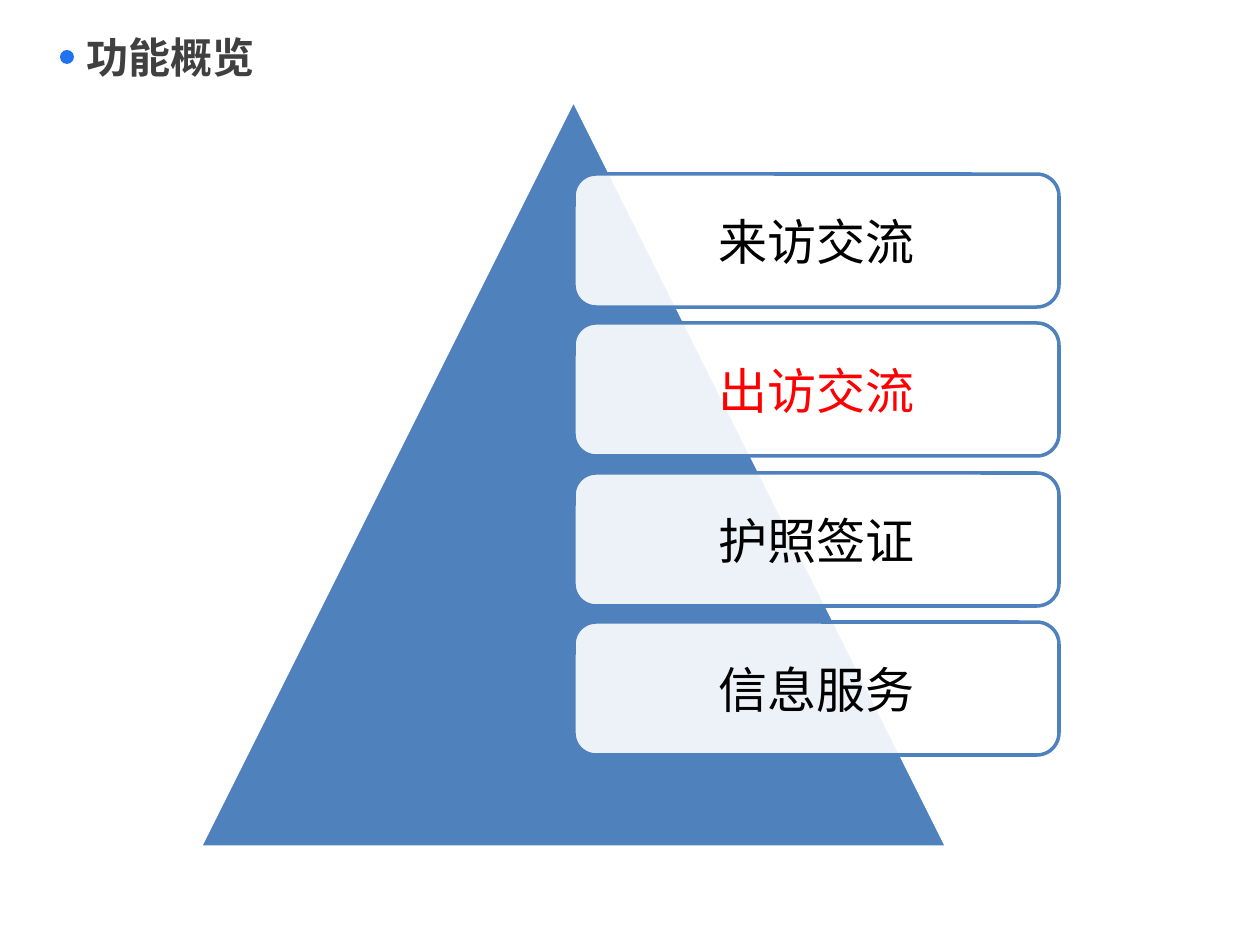
from pptx import Presentation
from pptx import util as u
from pptx.dml.color import RGBColor
from pptx.enum import shapes, text
from lxml import etree

PX = 914400 / 126
COLORS = {"white": "FFFFFF", "blue": "4F81BD", "dot": "2073EE",
          "title": "404040", "black": "000000", "red": "FF0000"}
A = "{http://schemas.openxmlformats.org/drawingml/2006/main}"
ITEMS = [("来访交流", "black"), ("出访交流", "red"),
         ("护照签证", "black"), ("信息服务", "black")]


def px(n):
    return u.Emu(round(n * PX))


def rgb(name):
    return RGBColor.from_string(COLORS[name])


def add_shape(s, kind, box, fill, line=None):
    sp = s.shapes.add_shape(kind, *map(px, box))
    sp.shadow.inherit = False
    sp.fill.solid()
    sp.fill.fore_color.rgb = rgb(fill)
    if line:
        sp.line.color.rgb = rgb(line)
        sp.line.width = u.Pt(2)
    else:
        sp.line.fill.background()
    return sp


def write(sp, words, font, size, color, align, bold=False):
    tf = sp.text_frame
    tf.word_wrap = True
    tf.vertical_anchor = text.MSO_ANCHOR.MIDDLE
    p = tf.paragraphs[0]
    p.text = words
    p.alignment = align
    r = p.runs[0]
    r.font.name, r.font.size, r.font.bold = font, u.Pt(size), bold
    r.font.color.rgb = rgb(color)
    return r


def add_title(s, x, y, w, h):
    # Round marker, then the heading
    add_shape(s, shapes.MSO_SHAPE.OVAL, (x, y + 35, 14, 14), "dot")
    sp = s.shapes.add_textbox(*map(px, (x + 14, y, w - 14, h)))
    font = "Noto Sans CJK SC"
    r = write(sp, "功能概览", font, 24, "title", text.PP_ALIGN.LEFT, True)
    # East Asian typeface
    etree.SubElement(r.font._element, A + "ea", typeface=font)


def add_pyramid(s, x, y, size):
    # Triangle behind the cards
    add_shape(s, shapes.MSO_SHAPE.ISOSCELES_TRIANGLE, (x, y, size, size),
              "blue", "white")
    # Translucent cards, starting near the triangle's axis
    for i, (words, color) in enumerate(ITEMS):
        box = (x + 374, y + 74 + round(149.3 * i), 485, 133)
        sp = add_shape(s, shapes.MSO_SHAPE.ROUNDED_RECTANGLE, box, "white", "blue")
        clr = sp.fill._xPr.find(f"{A}solidFill/{A}srgbClr")
        etree.SubElement(clr, A + "alpha", val="90000")
        write(sp, words, "Calibri", 28, color, text.PP_ALIGN.CENTER)


def main():
    prs = Presentation()
    prs.slide_width, prs.slide_height = px(1260), px(945)
    s = prs.slides.add_slide(prs.slide_layouts[6])
    add_title(s, 60, 15, 1134, 84)
    add_pyramid(s, 200, 100, 747)
    prs.save("out.pptx")


if __name__ == "__main__":
    main()
